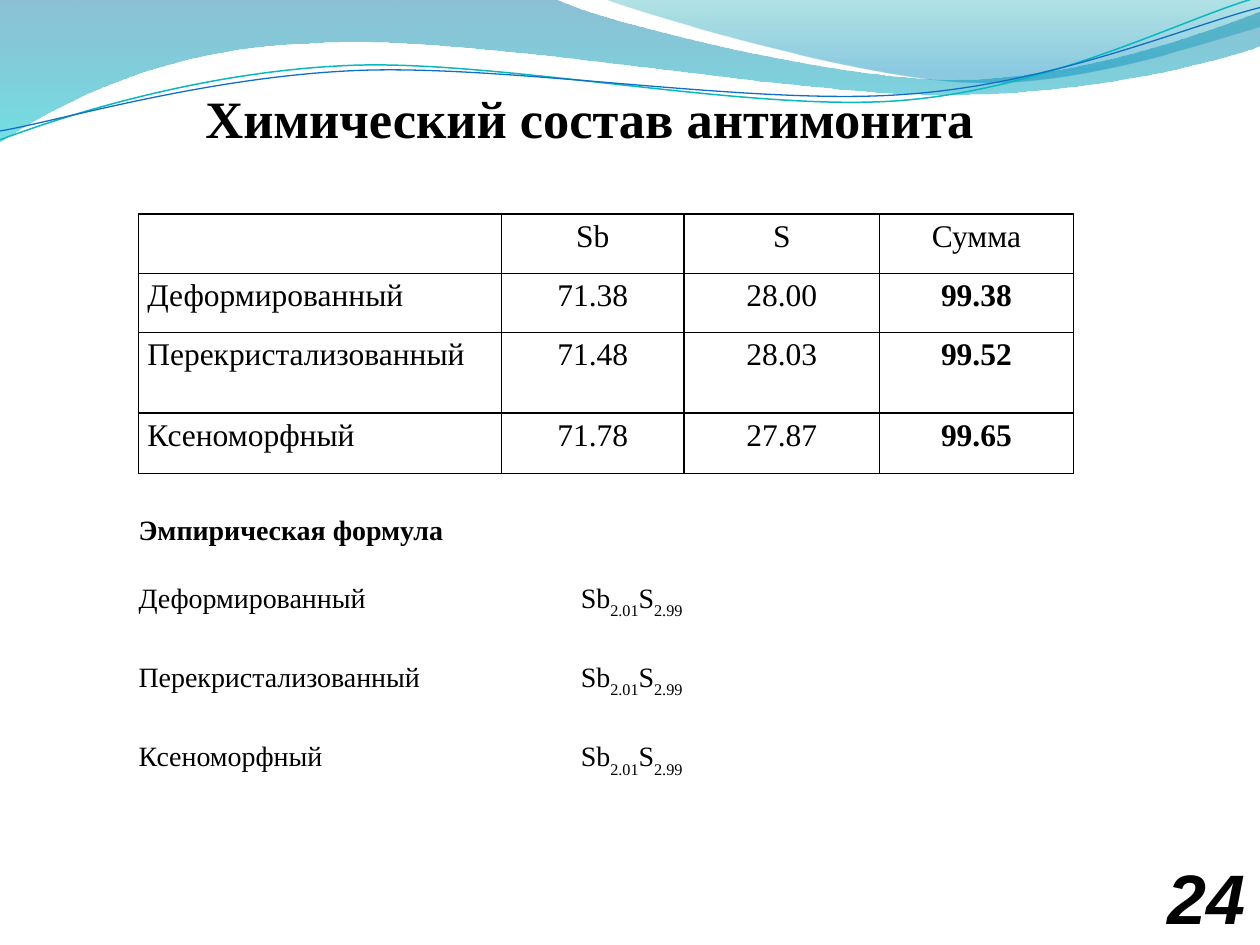
from dataclasses import dataclass
from typing import Optional

from lxml import etree
from pptx import Presentation
from pptx.dml.color import RGBColor
from pptx.enum.shapes import MSO_SHAPE
from pptx.enum.text import MSO_ANCHOR, MSO_AUTO_SIZE, PP_ALIGN
from pptx.oxml.ns import qn
from pptx.util import Emu, Inches, Pt

RECT = MSO_SHAPE.RECTANGLE
TOP, MIDDLE = MSO_ANCHOR.TOP, MSO_ANCHOR.MIDDLE
LEFT, CENTER, JUSTIFY = PP_ALIGN.LEFT, PP_ALIGN.CENTER, PP_ALIGN.JUSTIFY
NO_FIT = MSO_AUTO_SIZE.NONE

BLACK = RGBColor(0x00, 0x00, 0x00)
WHITE = RGBColor(0xFF, 0xFF, 0xFF)
DEEP_BLUE = RGBColor(0x00, 0x74, 0xA1)
AQUA = RGBColor(0x00, 0xC6, 0xCF)
TEAL = RGBColor(0x00, 0xA1, 0xA9)
SKY = RGBColor(0x00, 0x8B, 0xBF)
LINE_TEAL = RGBColor(0x0A, 0xB8, 0xBF)
LINE_BLUE = RGBColor(0x0F, 0x6F, 0xC6)

SERIF = "Times New Roman"
GRID_COLUMNS = 10
CELL = Inches(10) // GRID_COLUMNS
FINE = 1000


@dataclass
class Stop:
    position: float
    color: RGBColor
    opacity: int


@dataclass
class Wave:
    start: tuple
    segments: list
    stops: Optional[list] = None
    line: Optional[RGBColor] = None
    weight: float = 0


@dataclass
class Formula:
    label: str
    tabs: int
    space: float


WAVES = [
    Wave((0, 0), [
        (4.4, -0.01),
        (4.76, 0.17, 6.64, 0.63, 7.58, 0.63), (8.53, 0.63, 9.58, 0.26, 10, 0.09),
        (10.01, 0.36),
        (9.83, 0.44, 8.7, 0.76, 7.46, 0.75), (6.22, 0.75, 3.82, 0.28, 2.57, 0.34),
        (1.29, 0.36, 0.46, 0.83, -0.01, 1.13)],
        stops=[Stop(0, DEEP_BLUE, 45), Stop(1, AQUA, 55)]),
    Wave((4.79, -0.01), [
        (5.09, 0.11, 6.82, 0.62, 7.69, 0.65), (8.56, 0.69, 9.61, 0.32, 10, 0.21),
        (10, 0)],
        stops=[Stop(0, TEAL, 30), Stop(0.8, SKY, 45)]),
    Wave((0, 1.11), [
        (0.48, 0.93, 1.58, 0.57, 2.77, 0.52), (3.95, 0.47, 5.93, 0.89, 7.13, 0.8),
        (8.33, 0.71, 9.38, 0.15, 9.98, -0.02)],
        line=LINE_TEAL, weight=0.85),
    Wave((0, 1.04), [
        (0.47, 0.96, 1.64, 0.61, 2.83, 0.56), (4.03, 0.51, 5.97, 0.84, 7.17, 0.75),
        (8.36, 0.67, 9.41, 0.21, 10, 0.06)],
        line=LINE_BLUE, weight=0.75),
]

COLUMNS = [2.88, 1.45, 1.55, 1.54]
ROWS = [0.47, 0.47, 0.64, 0.48]
COMPOSITION = [
    ("", "Sb", "S", "Сумма"),
    ("Деформированный", "71.38", "28.00", "99.38"),
    ("Перекристализованный", "71.48", "28.03", "99.52"),
    ("Ксеноморфный", "71.78", "27.87", "99.65"),
]
FORMULAS = [
    Formula("Деформированный", 2, 19.3),
    Formula("Перекристализованный", 2, 22.7),
    Formula("Ксеноморфный", 3, 22.7),
]
SUBSCRIPTS = [("2.01", "S"), ("2.99", "")]


def grid(cells: float) -> Emu:
    return Emu(round(cells * CELL))


def assign(target, values: dict) -> None:
    for name, value in values.items():
        setattr(target, name, value)


def place(s, left: float, top: float, width: float, height: float) -> None:
    names = ("left", "top", "width", "height")
    assign(s, dict(zip(names, map(grid, (left, top, width, height)))))


def add_run(p, text: str, size: float, name: str = SERIF, **extra):
    r = p.add_run()
    r.text = text
    assign(r.font, {"name": name, "size": Pt(size), "bold": False, **extra})
    r.font.color.rgb = BLACK
    return r


def bend(s, segments: list) -> None:
    corners = s._element.iter(qn("a:lnTo"))
    corners = iter(list(corners))
    for segment in segments:
        first = next(corners)
        if len(segment) == 2:
            continue
        first.tag = qn("a:cubicBezTo")
        for extra in (next(corners), next(corners)):
            first.append(extra[0])
            extra.getparent().remove(extra)


def draw_wave(slide, wave: Wave) -> None:
    pairs = [seg[i:i + 2] for seg in wave.segments for i in range(0, len(seg), 2)]
    points = [(x * FINE, y * FINE) for x, y in [wave.start, *pairs]]
    builder = slide.shapes.build_freeform(*points[0], scale=CELL / FINE)
    builder.add_line_segments(points[1:], close=wave.stops is not None)
    s = builder.convert_to_shape()
    bend(s, wave.segments)
    s.shadow.inherit = False
    if wave.stops:
        s.line.fill.background()
        s.fill.gradient()
        s.fill.gradient_angle = 270
        for target, stop in zip(s.fill.gradient_stops, wave.stops):
            target.position = stop.position
            target.color.rgb = stop.color
        colors = s._element.spPr.find(qn("a:gradFill")).iter(qn("a:srgbClr"))
        for color, stop in zip(colors, wave.stops):
            etree.SubElement(color, qn("a:alpha"), val=str(stop.opacity * 1000))
    else:
        s.fill.background()
        s.line.color.rgb = wave.line
        s.line.width = Pt(wave.weight)


def border(cell) -> None:
    props = cell._tc.get_or_add_tcPr()
    for index, side in enumerate(("lnL", "lnR", "lnT", "lnB")):
        ln = etree.Element(qn(f"a:{side}"), w=str(Pt(1)))
        fill = etree.SubElement(ln, qn("a:solidFill"))
        etree.SubElement(fill, qn("a:srgbClr"), val=str(BLACK))
        props.insert(index, ln)


def draw_table(slide) -> None:
    frame = slide.shapes.add_table(len(ROWS), len(COLUMNS), grid(1.1), grid(1.7),
                                   grid(sum(COLUMNS)), grid(sum(ROWS)))
    table = frame.table
    for column, width in zip(table.columns, COLUMNS):
        column.width = grid(width)
    for i, (height, values) in enumerate(zip(ROWS, COMPOSITION)):
        table.rows[i].height = grid(height)
        for j, value in enumerate(values):
            cell = table.cell(i, j)
            assign(cell, {"margin_left": grid(0.07), "margin_right": grid(0.07),
                          "margin_top": 0, "margin_bottom": 0})
            cell.fill.background()
            border(cell)
            p = cell.text_frame.paragraphs[0]
            assign(p, {"alignment": CENTER if j else LEFT, "line_spacing": 1.15})
            if value:
                add_run(p, value, 18, bold=i > 0 and j == len(COLUMNS) - 1)


def format_line(p, space: float) -> None:
    props = p._p.get_or_add_pPr()
    for name, cells in {"marL": 0, "indent": 0.49, "defTabSz": 1}.items():
        props.set(name, str(grid(cells)))
    etree.SubElement(props, qn("a:buNone"))
    assign(p, {"space_before": Pt(space), "alignment": LEFT})


def fill_formulas(tf) -> None:
    p = tf.paragraphs[0]
    format_line(p, 0)
    add_run(p, "Эмпирическая формула", 16, bold=True)
    for formula in FORMULAS:
        p = tf.add_paragraph()
        format_line(p, formula.space)
        add_run(p, formula.label + "\t" * formula.tabs + "Sb", 16)
        for amount, element in SUBSCRIPTS:
            r = add_run(p, amount, 16)
            r._r.get_or_add_rPr().set("baseline", "-30000")
            if element:
                add_run(p, element, 16)


def main() -> None:
    prs = Presentation()
    assign(prs, {"slide_width": Inches(10), "slide_height": Inches(7.5)})
    slide = prs.slides.add_slide(prs.slide_layouts[1])
    title, body = slide.placeholders
    for wave in WAVES:
        draw_wave(slide, wave)

    place(title, 1.53, 0.63, 6.36, 0.61)
    assign(title.text_frame, {"word_wrap": False, "auto_size": NO_FIT, "vertical_anchor": TOP})
    p = title.text_frame.paragraphs[0]
    p.alignment = LEFT
    add_run(p, "Химический состав антимонита", 30, bold=True)

    number = slide.shapes.add_shape(RECT, *map(grid, (9.17, 6.73, 0.83, 0.77)))
    number.shadow.inherit = False
    number.fill.solid()
    number.fill.fore_color.rgb = WHITE
    number.line.fill.background()
    assign(number.text_frame, {"word_wrap": True, "vertical_anchor": MIDDLE})
    p = number.text_frame.paragraphs[0]
    p.alignment = JUSTIFY
    add_run(p, "24", 40, "Arial", bold=True, italic=True)

    draw_table(slide)
    place(body, 0.51, 4.02, 5.74, 2.28)
    assign(body.text_frame, {"word_wrap": True, "auto_size": NO_FIT, "vertical_anchor": TOP})
    fill_formulas(body.text_frame)
    for s in (title, body):
        slide.shapes._spTree.append(s._element)
    prs.save("out.pptx")


if __name__ == "__main__":
    main()
